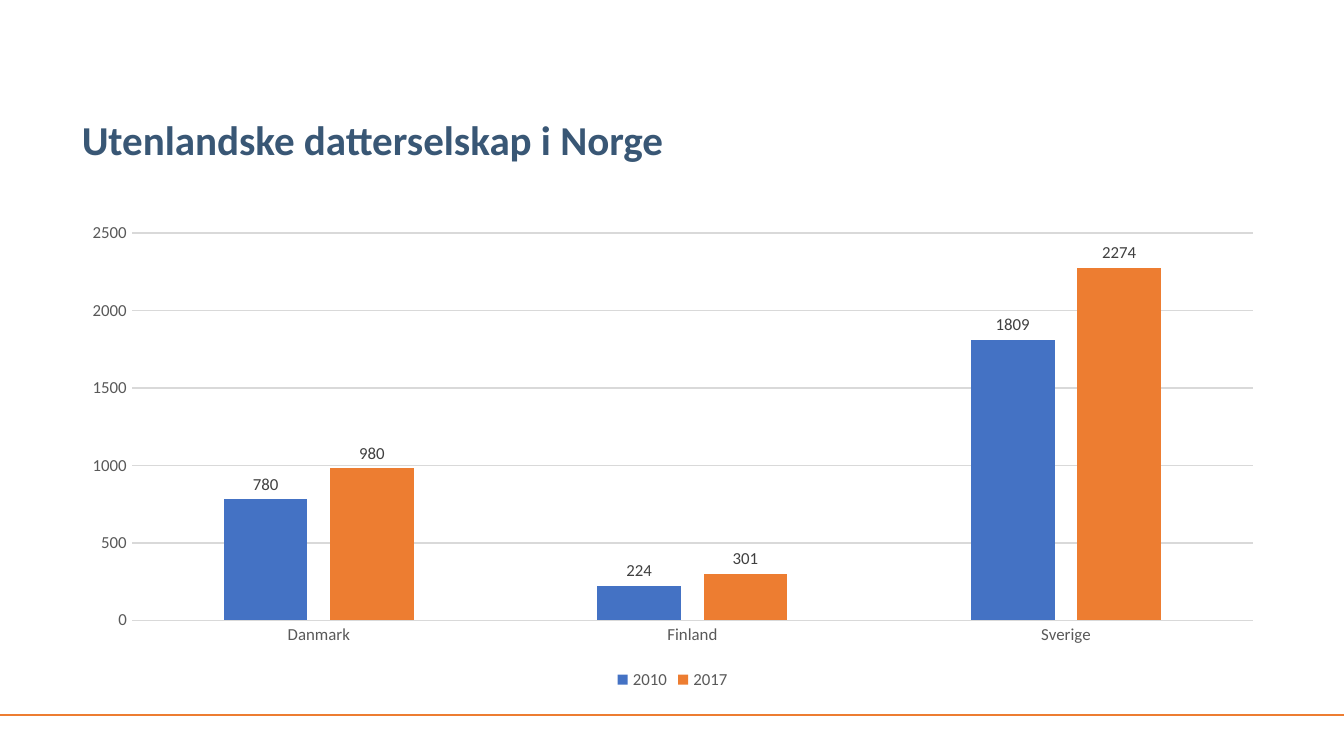
"""Build a slide comparing foreign subsidiaries in Norway by country and year."""
from dataclasses import dataclass

from lxml import etree
from pptx import Presentation
from pptx.chart.chart import Chart
from pptx.chart.data import CategoryChartData
from pptx.dml.color import RGBColor
from pptx.dml.line import LineFormat
from pptx.enum.chart import XL_CHART_TYPE, XL_LABEL_POSITION, XL_LEGEND_POSITION, XL_TICK_MARK
from pptx.enum.shapes import MSO_CONNECTOR
from pptx.enum.text import MSO_ANCHOR
from pptx.oxml.ns import qn
from pptx.slide import Slide
from pptx.text.text import Font
from pptx.util import Inches, Pt

CLUSTERED = XL_CHART_TYPE.COLUMN_CLUSTERED
OUTSIDE_END = XL_LABEL_POSITION.OUTSIDE_END
BOTTOM = XL_LEGEND_POSITION.BOTTOM
NO_TICK = XL_TICK_MARK.NONE
STRAIGHT = MSO_CONNECTOR.STRAIGHT
TOP = MSO_ANCHOR.TOP

BLACK = RGBColor(0x00, 0x00, 0x00)
NAVY = RGBColor(0x39, 0x57, 0x75)
BLUE = RGBColor(0x44, 0x72, 0xC4)
ORANGE = RGBColor(0xED, 0x7D, 0x31)
AXIS_GREY = RGBColor(0x59, 0x59, 0x59)
LABEL_GREY = RGBColor(0x40, 0x40, 0x40)
GRID_GREY = RGBColor(0xD9, 0xD9, 0xD9)

SLIDE_WIDTH = Inches(10)
SLIDE_HEIGHT = SLIDE_WIDTH * 9 // 16
LEFT = Inches(0.51)
CONTENT_WIDTH = Inches(8.99)
FOOTER_TOP = Inches(5.32)
COUNTRIES = ("Danmark", "Finland", "Sverige")


@dataclass(frozen=True)
class YearCount:
    """Subsidiary counts for one year, in country order."""
    year: str
    counts: tuple[int, ...]
    color: RGBColor


YEARS = (
    YearCount("2010", (780, 224, 1809), BLUE),
    YearCount("2017", (980, 301, 2274), ORANGE),
)


def apply_format(target: object, values: dict[str, object]) -> None:
    """Set each named attribute on the target."""
    for name, value in values.items():
        setattr(target, name, value)


def style_font(font: Font, size: float, color: RGBColor, bold: bool = False) -> None:
    """Give a font its face, size, weight and colour."""
    apply_format(font, {"name": "Calibri", "size": Pt(size), "bold": bold})
    font.color.rgb = color


def style_line(line: LineFormat, color: RGBColor) -> None:
    """Give a line its colour and the common thin width."""
    line.color.rgb = color
    line.width = Pt(0.75)


def add_footer_rule(slide: Slide) -> None:
    """Draw the rule across the foot of the slide."""
    rule = slide.shapes.add_connector(STRAIGHT, 0, FOOTER_TOP, SLIDE_WIDTH, FOOTER_TOP)
    style_line(rule.line, ORANGE)
    etree.SubElement(rule._element.spPr, qn("a:effectLst"))


def add_heading(slide: Slide, text: str) -> None:
    """Write the slide heading."""
    heading = slide.shapes.add_textbox(LEFT, Inches(0.8), CONTENT_WIDTH, Inches(0.67))
    frame = heading.text_frame
    apply_format(frame, {"word_wrap": True, "vertical_anchor": TOP})
    run = frame.paragraphs[0].add_run()
    run.text = text
    style_font(run.font, 22, NAVY, bold=True)


def style_axes(chart: Chart) -> None:
    """Style both axes, the gridlines and the value scale."""
    for axis in (chart.category_axis, chart.value_axis):
        apply_format(axis, {"major_tick_mark": NO_TICK, "minor_tick_mark": NO_TICK})
        style_font(axis.tick_labels.font, 9, AXIS_GREY)
    style_line(chart.category_axis.format.line, GRID_GREY)
    counts = chart.value_axis
    apply_format(counts, {"minimum_scale": 0, "maximum_scale": 2500, "major_unit": 500,
                          "has_major_gridlines": True})
    counts.format.line.fill.background()
    style_line(counts.major_gridlines.format.line, GRID_GREY)


def add_subsidiary_chart(slide: Slide) -> None:
    """Chart the subsidiary counts with one column per year."""
    data = CategoryChartData()
    data.categories = COUNTRIES
    for entry in YEARS:
        data.add_series(entry.year, entry.counts)
    chart = slide.shapes.add_chart(
        CLUSTERED, LEFT, Inches(1.59), CONTENT_WIDTH, Inches(3.58), data).chart
    apply_format(chart, {"has_title": False, "has_legend": True})
    style_font(chart.font, 10, BLACK)
    apply_format(chart.legend, {"position": BOTTOM, "include_in_layout": False})
    style_font(chart.legend.font, 9, AXIS_GREY)
    style_axes(chart)
    plot = chart.plots[0]
    apply_format(plot, {"gap_width": 219, "overlap": -27, "vary_by_categories": False})
    for series, entry in zip(plot.series, YEARS):
        series.format.fill.solid()
        series.format.fill.fore_color.rgb = entry.color
        labels = series.data_labels
        apply_format(labels, {"show_value": True, "position": OUTSIDE_END})
        style_font(labels.font, 9, LABEL_GREY)


def main() -> None:
    """Assemble and save the slide."""
    deck = Presentation()
    apply_format(deck, {"slide_width": SLIDE_WIDTH, "slide_height": SLIDE_HEIGHT})
    slide = deck.slides.add_slide(deck.slide_layouts[6])
    add_footer_rule(slide)
    add_heading(slide, "Utenlandske datterselskap i Norge")
    add_subsidiary_chart(slide)
    deck.save("out.pptx")


if __name__ == "__main__":
    main()
